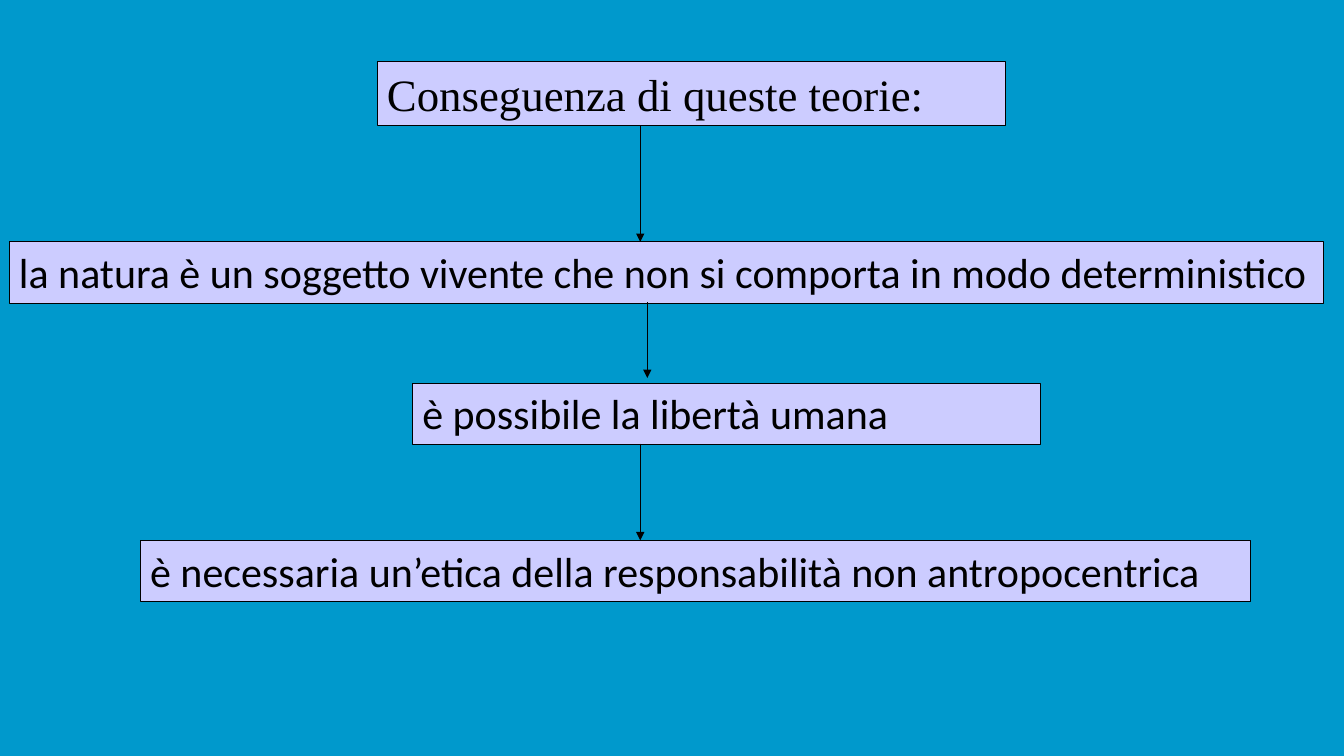
from dataclasses import dataclass

from lxml.etree import SubElement
from pptx import Presentation
from pptx.dml.color import RGBColor
from pptx.enum.shapes import MSO_CONNECTOR as Connector, MSO_SHAPE as Shape
from pptx.enum.text import MSO_ANCHOR as Anchor, MSO_AUTO_SIZE as AutoSize, PP_ALIGN as Align
from pptx.oxml.ns import qn
from pptx.util import Inches, Pt


@dataclass(frozen=True)
class Theme:
    """Colours, fonts and sizes of the slide."""
    background: RGBColor = RGBColor(0x00, 0x99, 0xCC)
    panel: RGBColor = RGBColor(0xCC, 0xCC, 0xFF)
    ink: RGBColor = RGBColor(0x00, 0x00, 0x00)
    heading_font: str = "Times New Roman"
    body_font: str = "Calibri"
    heading_size: float = 32
    body_size: float = 30
    border: float = 0.75
    arrow: float = 1


THEME = Theme()
HEADING = ("Conseguenza di queste teorie:", (3.74, 0.61, 6.23, 0.64))
CONSEQUENCES = [
    ("la natura è un soggetto vivente che non si comporta in modo deterministico",
     (0.09, 2.4, 13.04, 0.61)),
    ("è possibile la libertà umana", (4.09, 3.8, 6.23, 0.61)),
    ("è necessaria un’etica della responsabilità non antropocentrica",
     (1.39, 5.36, 11.01, 0.61)),
]
ARROWS = [(6.35, 1.25, 2.4), (6.42, 3, 3.75), (6.35, 4.4, 5.36)]


def write_text(frame, text, *, font=THEME.body_font, size=THEME.body_size, color=THEME.ink):
    """Write one left-aligned line of formatted text into a frame."""
    frame.word_wrap = True
    frame.auto_size = AutoSize.SHAPE_TO_FIT_TEXT
    frame.vertical_anchor = Anchor.TOP
    paragraph = frame.paragraphs[0]
    paragraph.alignment = Align.LEFT
    run = paragraph.add_run()
    run.text = text
    run.font.name = font
    run.font.size = Pt(size)
    run.font.color.rgb = color


def add_statement(slide, text, box, **text_format):
    """Add a bordered statement filling the given box."""
    statement = slide.shapes.add_shape(Shape.RECTANGLE, *map(Inches, box))
    statement.shadow.inherit = False
    statement.fill.solid()
    statement.fill.fore_color.rgb = THEME.panel
    statement.line.color.rgb = THEME.ink
    statement.line.width = Pt(THEME.border)
    write_text(statement.text_frame, text, **text_format)


def add_arrow(slide, x, top, bottom):
    """Add a downward arrow at x."""
    arrow = slide.shapes.add_connector(
        Connector.STRAIGHT, Inches(x), Inches(top), Inches(x), Inches(bottom))
    arrow.line.color.rgb = THEME.ink
    arrow.line.width = Pt(THEME.arrow)
    SubElement(arrow.line._get_or_add_ln(), qn("a:tailEnd"), type="triangle")
    SubElement(arrow._element.spPr, qn("a:effectLst"))


def add_reasoning_chain(slide, left=0, top=0):
    """Place the heading, its consequences and the arrows from a corner."""
    def shifted(box):
        x, y, width, height = box
        return left + x, top + y, width, height

    heading, heading_box = HEADING
    add_statement(slide, heading, shifted(heading_box),
                  font=THEME.heading_font, size=THEME.heading_size)
    for consequence, box in CONSEQUENCES:
        add_statement(slide, consequence, shifted(box))
    for x, start, end in ARROWS:
        add_arrow(slide, left + x, top + start, top + end)


def main():
    """Build and save the slide."""
    deck = Presentation()
    deck.slide_width, deck.slide_height = Inches(13.33), Inches(7.5)
    slide = deck.slides.add_slide(deck.slide_layouts[6])
    slide.background.fill.solid()
    slide.background.fill.fore_color.rgb = THEME.background
    add_reasoning_chain(slide)
    deck.save("out.pptx")


if __name__ == "__main__":
    main()
